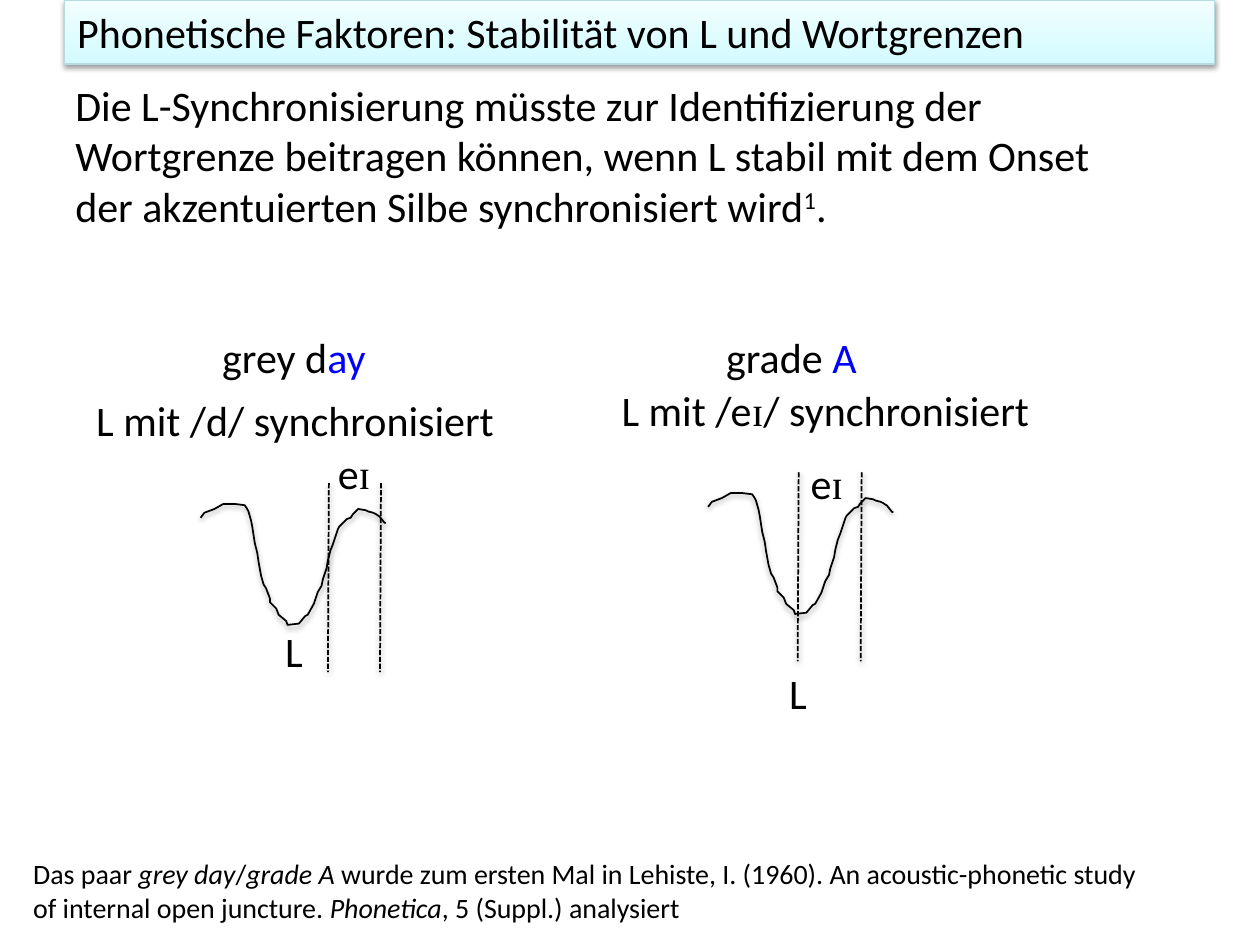
from pptx import Presentation
from pptx.dml.color import RGBColor
from pptx.enum.dml import MSO_LINE_DASH_STYLE as Dash
from pptx.enum.shapes import MSO_CONNECTOR as Connector
from pptx.enum.text import MSO_ANCHOR as Anchor, MSO_AUTO_SIZE as AutoSize, PP_ALIGN as Align
from pptx.oxml import parse_xml
from pptx.util import Cm, Pt

BLACK = RGBColor(0x00, 0x00, 0x00)
BLUE = RGBColor(0x00, 0x00, 0xFF)
BAR_DARK = RGBColor(0xD3, 0xFB, 0xFF)
BAR_LIGHT = RGBColor(0xF2, 0xFE, 0xFF)
BAR_EDGE = RGBColor(0xB6, 0xDC, 0xDF)

SHADOW = (
    '<a:effectLst xmlns:a="http://schemas.openxmlformats.org/drawingml/2006/main">'
    '<a:outerShdw blurRad="40000" dist="20000" dir="5400000" rotWithShape="0">'
    '<a:srgbClr val="000000"><a:alpha val="38000"/></a:srgbClr>'
    '</a:outerShdw></a:effectLst>'
)

CONTOUR_UNIT = Cm(0.0254)
CONTOUR = [
    (1, 11), (4, 7), (12, 4), (19, 0), (28, 0), (36, 1), (38, 4), (39, 6), (41, 13),
    (42, 18), (44, 31), (46, 39), (47, 46), (49, 57), (51, 64), (53, 67), (56, 75),
    (56, 78), (61, 83), (63, 88), (69, 93), (70, 96), (79, 95), (84, 89), (86, 88),
    (91, 79), (93, 73), (94, 70), (97, 65), (98, 60), (100, 54), (101, 51), (102, 45),
    (104, 37), (106, 32), (109, 23), (110, 20), (111, 18), (117, 12), (120, 11),
    (122, 8), (126, 4), (132, 5), (134, 6), (138, 7), (140, 8), (143, 10), (147, 15),
    (148, 15),
]


def add_shadow(shape):
    properties = shape._element.spPr
    for effects in properties.findall("{*}effectLst"):
        properties.remove(effects)
    properties.append(parse_xml(SHADOW))


def write_spans(frame, spans, size):
    para = frame.paragraphs[0]
    para.alignment = Align.LEFT
    para.font.size = Pt(size)
    para.font.name = "Calibri"
    para.font.color.rgb = BLACK
    for text, style in spans:
        span = para.add_run()
        span.text = text
        if style == "blue":
            span.font.color.rgb = BLUE
        elif style == "italic":
            span.font.italic = True
        elif style == "phonetic":
            span.font.name = "Times New Roman"
        elif style == "superscript":
            span.font._element.set("baseline", "30000")


def place(shape, left, top, width, height):
    shape.left, shape.top = Cm(left), Cm(top)
    shape.width, shape.height = Cm(width), Cm(height)


def add_title(page, text):
    title = page.shapes.title
    place(title, 1.3, 0, 23.19, 1.29)
    title.fill.gradient()
    title.fill.gradient_angle = 90
    for stop, color in zip(title.fill.gradient_stops, (BAR_DARK, BAR_LIGHT)):
        stop.color.rgb = color
    title.line.color.rgb = BAR_EDGE
    title.line.width = Pt(0.75)
    add_shadow(title)
    frame = title.text_frame
    frame.auto_size = AutoSize.NONE
    frame.vertical_anchor = Anchor.TOP
    write_spans(frame, [(text, None)], 24)


def add_text(page, left, top, width, height, spans, size=24):
    box = page.shapes.add_textbox(Cm(left), Cm(top), Cm(width), Cm(height))
    box.text_frame.word_wrap = True
    box.text_frame.auto_size = AutoSize.SHAPE_TO_FIT_TEXT
    write_spans(box.text_frame, spans, size)


def add_contour(page, left, top):
    builder = page.shapes.build_freeform(*CONTOUR[0], scale=CONTOUR_UNIT)
    builder.add_line_segments(CONTOUR[1:], close=False)
    contour = builder.convert_to_shape(Cm(left), Cm(top))
    contour.fill.background()
    contour.line.color.rgb = BLACK
    contour.line.width = Pt(1)
    add_shadow(contour)


def add_boundary(page, x, top):
    boundary = page.shapes.add_connector(
        Connector.STRAIGHT, Cm(x), Cm(top), Cm(x - 0.02), Cm(top + 3.81))
    boundary.line.color.rgb = BLACK
    boundary.line.width = Pt(1)
    boundary.line.dash_style = Dash.SQUARE_DOT
    add_shadow(boundary)


def add_example(page, contour_at, boundaries, vowel_at, low_at):
    left, top = contour_at
    add_contour(page, left, top)
    for x in boundaries:
        add_boundary(page, x, top - 0.42)
    add_text(page, *vowel_at, 1.27, 1.29, [("e", None), ("ɪ", "phonetic")])
    add_text(page, *low_at, 1.27, 1.29, [("L", None)])


def main():
    deck = Presentation()
    deck.slide_width, deck.slide_height = Cm(25.4), Cm(19.05)
    page = deck.slides.add_slide(deck.slide_layouts[5])

    add_title(page, "Phonetische Faktoren: Stabilität von L und Wortgrenzen")
    add_text(page, 1.27, 1.48, 21.8, 3.33, [
        ("Die L-Synchronisierung müsste zur Identifizierung der Wortgrenze beitragen "
         "können, wenn L stabil mit dem Onset der akzentuierten Silbe synchronisiert "
         "wird", None),
        ("1", "superscript"),
        (".", None),
    ])

    add_text(page, 4.23, 6.56, 4.23, 1.29, [("grey d", None), ("ay", "blue")])
    add_text(page, 14.39, 6.56, 4.23, 1.29, [("grade ", None), ("A", "blue")])
    add_example(page, (4.02, 10.16), (6.63, 7.68), (6.56, 8.89), (5.5, 12.49))
    add_example(page, (14.25, 9.94), (16.1, 17.37), (16.09, 9.1), (15.66, 13.34))
    add_text(page, 1.69, 7.83, 9.31, 1.29, [("L mit /d/ synchronisiert", None)])
    add_text(page, 12.28, 7.62, 11, 1.29, [
        ("L mit /e", None), ("ɪ", "phonetic"), ("/ synchronisiert", None)])

    add_text(page, 0.42, 17.15, 23.28, 1.63, [
        ("Das paar ", None),
        ("grey day", "italic"),
        ("/", None),
        ("grade A", "italic"),
        (" wurde zum ersten Mal in Lehiste, I. (1960). An acoustic-phonetic study of "
         "internal open juncture. ", None),
        ("Phonetica", "italic"),
        (", 5 (Suppl.) analysiert", None),
    ], size=16)

    deck.save("out.pptx")


if __name__ == "__main__":
    main()
